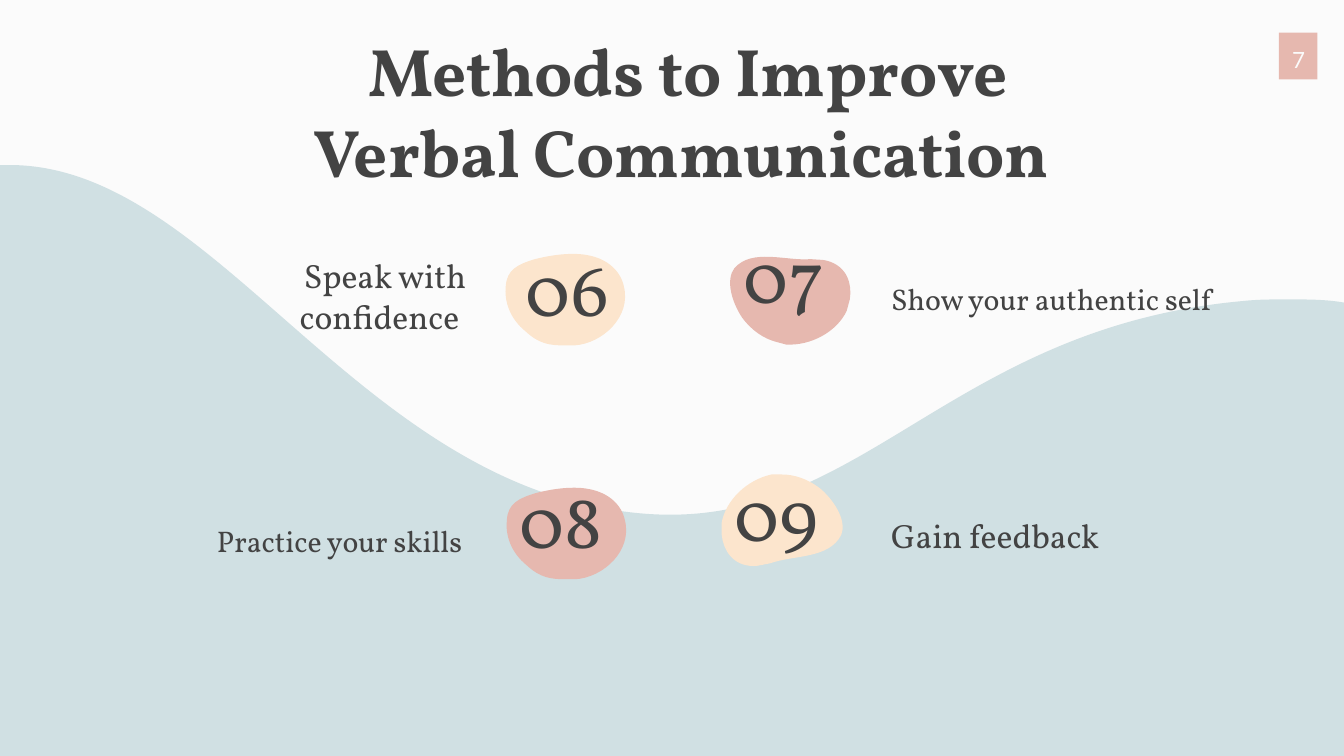
"""Build the slide on methods to improve verbal communication."""
from dataclasses import dataclass

from lxml.etree import SubElement
from pptx import Presentation
from pptx.dml.color import RGBColor
from pptx.enum.shapes import MSO_SHAPE
from pptx.enum.text import MSO_ANCHOR, MSO_AUTO_SIZE, PP_ALIGN
from pptx.oxml.ns import qn
from pptx.util import Cm, Pt


@dataclass(frozen=True)
class Theme:
    paper: str = "FBFBFB"
    water: str = "D0E0E3"
    rose: str = "E6B8AF"
    cream: str = "FCE5CD"
    ink: str = "434343"
    serif: str = "Vollkorn"
    sans: str = "Lato"
    title: int = 36
    number: int = 40
    caption: int = 18
    small_caption: int = 16
    page: int = 12


THEME = Theme()
WIDTH, HEIGHT = 25.4, 14.29
INSET = 0.25

TITLE = "Methods to Improve Verbal Communication "
TITLE_BOX = (5.51, 2.01, 14.99, 1.85)
PAGE = "7"
PAGE_BOX = (24.17, 0.62, 0.73, 0.88)

WAVE = [
    [(0.18, 3.12)],
    [(3.71, 3.12), (6.2, 8.05), (10.54, 9.4)],
    [(11.33, 9.63), (12.04, 9.73), (12.67, 9.73)],
    [(16.41, 9.73), (18.14, 6.17), (23.5, 5.69)],
    [(23.77, 5.66), (24.05, 5.66), (24.33, 5.66)],
    [(24.71, 5.66), (25.06, 5.66), (WIDTH, 5.72)],
    [(WIDTH, HEIGHT)],
    [(0, HEIGHT)],
    [(0, 3.12)],
    [(0.05, 3.12), (0.13, 3.12), (0.18, 3.12)],
]
PEBBLE = [
    [(1.3, 0)],
    [(1.09, 0), (0.86, 0.03), (0.58, 0.1)],
    [(0.25, 0.2), (0.05, 0.3), (0.03, 0.61)],
    [(0, 0.89), (0.1, 1.22), (0.41, 1.47)],
    [(0.66, 1.7), (0.86, 1.73), (1.14, 1.73)],
    [(1.19, 1.73), (1.27, 1.73), (1.32, 1.73)],
    [(1.85, 1.7), (2.41, 1.19), (2.26, 0.61)],
    [(2.21, 0.36), (1.96, 0), (1.3, 0)],
]
DROP = [
    [(1.14, 0)],
    [(1.07, 0), (1.02, 0), (0.94, 0)],
    [(0.48, 0.1), (0.08, 0.48), (0, 0.91)],
    [(0, 0.99), (0, 1.07), (0, 1.14)],
    [(0.03, 1.42), (0.2, 1.73), (0.61, 1.73)],
    [(0.69, 1.73), (0.79, 1.7), (0.91, 1.68)],
    [(1.35, 1.52), (2.03, 1.6), (2.26, 1.14)],
    [(2.36, 0.89), (2.16, 0.53), (1.88, 0.28)],
    [(1.63, 0.08), (1.37, 0), (1.14, 0)],
]

METHODS = [
    dict(number="06", number_box=(9.4, 4.72, 2.64, 1.4),
         caption="Speak with confidence ", caption_box=(2.86, 4.75, 6.2, 1.85),
         size=THEME.caption, align=PP_ALIGN.RIGHT,
         outline=PEBBLE, origin=(9.53, 4.8), color=THEME.cream, turn=0),
    dict(number="07", number_box=(13.79, 4.47, 2.06, 1.4),
         caption="Show your authentic self", caption_box=(16.59, 4.11, 8.84, 2.13),
         size=THEME.small_caption, align=PP_ALIGN.LEFT,
         outline=DROP, origin=(13.67, 4.75), color=THEME.rose, turn=195),
    dict(number="08", number_box=(9.4, 9.1, 2.41, 1.4),
         caption="Practice your skills ", caption_box=(0.26, 8.95, 8.84, 1.85),
         size=THEME.small_caption, align=PP_ALIGN.RIGHT,
         outline=PEBBLE, origin=(9.55, 9.22), color=THEME.rose, turn=0),
    dict(number="09", number_box=(13.47, 8.97, 2.41, 1.4),
         caption="Gain feedback", caption_box=(16.59, 9.27, 7.82, 1.47),
         size=THEME.caption, align=PP_ALIGN.LEFT,
         outline=DROP, origin=(13.64, 8.97), color=THEME.cream, turn=0),
]


def paint(shape, color):
    shape.shadow.inherit = False
    shape.fill.solid()
    shape.fill.fore_color.rgb = RGBColor.from_string(color)
    shape.line.fill.background()


def bend(shape, segments):
    """Turn each run of three line steps into one Bezier curve."""
    steps = iter(list(shape._element.iter(qn("a:lnTo"))))
    for segment in segments:
        first, *others = [next(steps) for _ in segment]
        if others:
            first.tag = qn("a:cubicBezTo")
        for step in others:
            first.append(step[0])
            step.getparent().remove(step)


def add_outline(slide, outline, color, origin=(0, 0), turn=0):
    start, *rest = [(Cm(x + origin[0]), Cm(y + origin[1]))
                    for segment in outline for x, y in segment]
    builder = slide.shapes.build_freeform(*start)
    builder.add_line_segments(rest, close=True)
    shape = builder.convert_to_shape()
    bend(shape, outline[1:])
    shape.rotation = turn
    paint(shape, color)
    return shape


def place(shape, box):
    shape.left, shape.top, shape.width, shape.height = map(Cm, box)


def write(shape, text, size, align, anchor, font=THEME.serif, color=THEME.ink, bold=False):
    frame = shape.text_frame
    frame.text = text
    frame.word_wrap = True
    frame.auto_size = MSO_AUTO_SIZE.NONE
    frame.vertical_anchor = anchor
    frame.margin_left = frame.margin_right = Cm(INSET)
    frame.margin_top = frame.margin_bottom = Cm(INSET)
    paragraph = frame.paragraphs[0]
    paragraph.alignment = align
    paragraph.line_spacing = 1.0
    paragraph.space_before = paragraph.space_after = Pt(0)
    style = paragraph.runs[0].font
    style.name, style.size, style.bold = font, Pt(size), bold
    style.color.rgb = RGBColor.from_string(color)


def remove_bullet(shape):
    properties = shape.text_frame.paragraphs[0]._p.get_or_add_pPr()
    properties.set("marL", "0")
    properties.set("indent", "0")
    SubElement(properties, qn("a:buNone"))


def main():
    deck = Presentation()
    deck.slide_width, deck.slide_height = Cm(WIDTH), Cm(HEIGHT)
    slide = deck.slides.add_slide(deck.slide_layouts.get_by_name("Comparison"))
    slide.background.fill.solid()
    slide.background.fill.fore_color.rgb = RGBColor.from_string(THEME.paper)

    wave = add_outline(slide, WAVE, THEME.water)
    slide.shapes._spTree.insert(2, wave._element)

    title, *captions = slide.placeholders
    place(title, TITLE_BOX)
    write(title, TITLE, THEME.title, PP_ALIGN.CENTER, MSO_ANCHOR.BOTTOM, bold=True)

    for method, caption in zip(METHODS, captions):
        place(caption, method["caption_box"])
        write(caption, method["caption"], method["size"], method["align"], MSO_ANCHOR.BOTTOM)
        remove_bullet(caption)
        add_outline(slide, method["outline"], method["color"], method["origin"], method["turn"])
        number = slide.shapes.add_textbox(*map(Cm, method["number_box"]))
        write(number, method["number"], THEME.number, PP_ALIGN.CENTER, MSO_ANCHOR.MIDDLE)

    page = slide.shapes.add_shape(MSO_SHAPE.RECTANGLE, *map(Cm, PAGE_BOX))
    paint(page, THEME.rose)
    write(page, PAGE, THEME.page, PP_ALIGN.CENTER, MSO_ANCHOR.TOP, THEME.sans, THEME.paper)

    deck.save("out.pptx")


if __name__ == "__main__":
    main()
